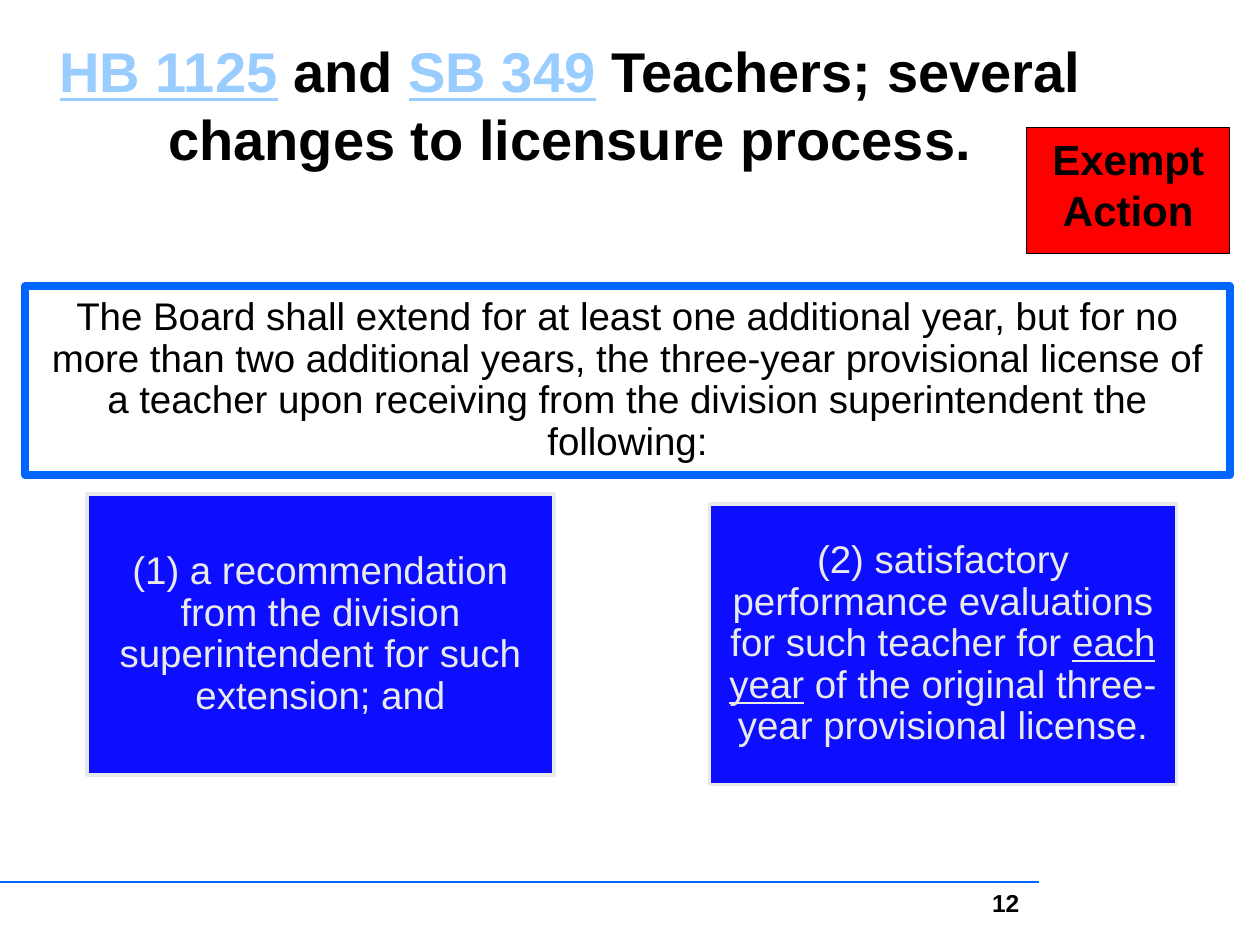
from lxml import etree
from pptx import Presentation
from pptx.dml.color import RGBColor
from pptx.enum.shapes import MSO_CONNECTOR, MSO_SHAPE
from pptx.enum.text import MSO_ANCHOR as Anchor, PP_ALIGN as Align
from pptx.oxml.ns import qn
from pptx.util import Cm, Pt

BLACK, BRIGHT_BLUE, DEEP_BLUE = "000000", "0066FF", "0D0DFF"
LINK_BLUE, PALE_GREY, RED = "99CCFF", "E8EAE9", "FF0000"


def color(hex_text):
    return RGBColor.from_string(hex_text)


class SlideBuilder:
    font_name = "Arial"

    def __init__(self, slide):
        self.slide = slide

    def set_text(self, shape, runs, size, ink=BLACK, bold=False, align=Align.CENTER,
                 anchor=Anchor.TOP, spacing=None, inset=None):
        """Fill a shape with one paragraph; each run is (text, underlined, colour or None)."""
        frame = shape.text_frame
        frame.word_wrap = True
        frame.vertical_anchor = anchor
        if inset is not None:
            frame.margin_left = frame.margin_right = inset
            frame.margin_top = frame.margin_bottom = inset
        paragraph = frame.paragraphs[0]
        paragraph.alignment = align
        if spacing:
            paragraph.line_spacing = spacing
        for text, underlined, run_ink in runs:
            run = paragraph.add_run()
            run.text = text
            font = run.font
            font.name, font.size, font.bold = self.font_name, Pt(size), bold
            font.underline = underlined
            font.color.rgb = color(run_ink or ink)

    def text(self, box, runs, size, **style):
        self.set_text(self.slide.shapes.add_textbox(*map(Cm, box)), runs, size, **style)

    def panel(self, box, runs, size, fill, outline, width, **style):
        panel = self.slide.shapes.add_shape(MSO_SHAPE.RECTANGLE, *map(Cm, box))
        panel.shadow.inherit = False
        if fill:
            panel.fill.solid()
            panel.fill.fore_color.rgb = color(fill)
        else:
            panel.fill.background()
        panel.line.color.rgb = color(outline)
        panel.line.width = Pt(width)
        self.set_text(panel, runs, size, **style)

    def rule(self, start_x, end_x, y, ink, width):
        rule = self.slide.shapes.add_connector(
            MSO_CONNECTOR.STRAIGHT, Cm(start_x), Cm(y), Cm(end_x), Cm(y))
        rule.line.color.rgb = color(ink)
        rule.line.width = Pt(width)
        etree.SubElement(rule._element.spPr, qn("a:effectLst"))


def main():
    deck = Presentation()
    deck.slide_width, deck.slide_height = Cm(25.4), Cm(19.05)
    page = SlideBuilder(deck.slides.add_slide(deck.slide_layouts[6]))

    page.rule(20.95, 0, 17.78, BRIGHT_BLUE, 1.25)
    page.text((0.23, 0.41, 22.53, 3.38), [
        ("HB 1125", True, LINK_BLUE),
        (" and ", False, None),
        ("SB 349", True, LINK_BLUE),
        (" Teachers; several changes to licensure process.", False, None),
    ], 32, bold=True, anchor=Anchor.MIDDLE)

    body = dict(size=22, anchor=Anchor.MIDDLE, spacing=0.9, inset=Cm(0.23))
    page.panel((0.51, 5.77, 24.28, 3.81), [
        ("The Board shall extend for at least one additional year, but for no more than "
         "two additional years, the three-year provisional license of a teacher upon "
         "receiving from the division superintendent the following:", False, None),
    ], fill=None, outline=BRIGHT_BLUE, width=4.5, **body)

    conditions = [
        (1.75, 9.96, [("(1) a recommendation from the division superintendent "
                       "for such extension; and", False, None)]),
        (14.3, 10.16, [("(2) satisfactory performance evaluations for such teacher for ",
                        False, None),
                       ("each year", True, None),
                       (" of the original three-year provisional license.", False, None)]),
    ]
    for left, top, runs in conditions:
        page.panel((left, top, 9.42, 5.66), runs, fill=DEEP_BLUE,
                   outline=PALE_GREY, width=2, ink=PALE_GREY, **body)

    page.text((15.52, 17.78, 5.28, 1.27), [("12", False, None)], 14,
              bold=True, align=Align.RIGHT)
    page.panel((20.7, 2.57, 4.09, 2.54), [("Exempt Action", False, None)], 24,
               fill=RED, outline=BLACK, width=0.75, bold=True)

    deck.save("out.pptx")


if __name__ == "__main__":
    main()
